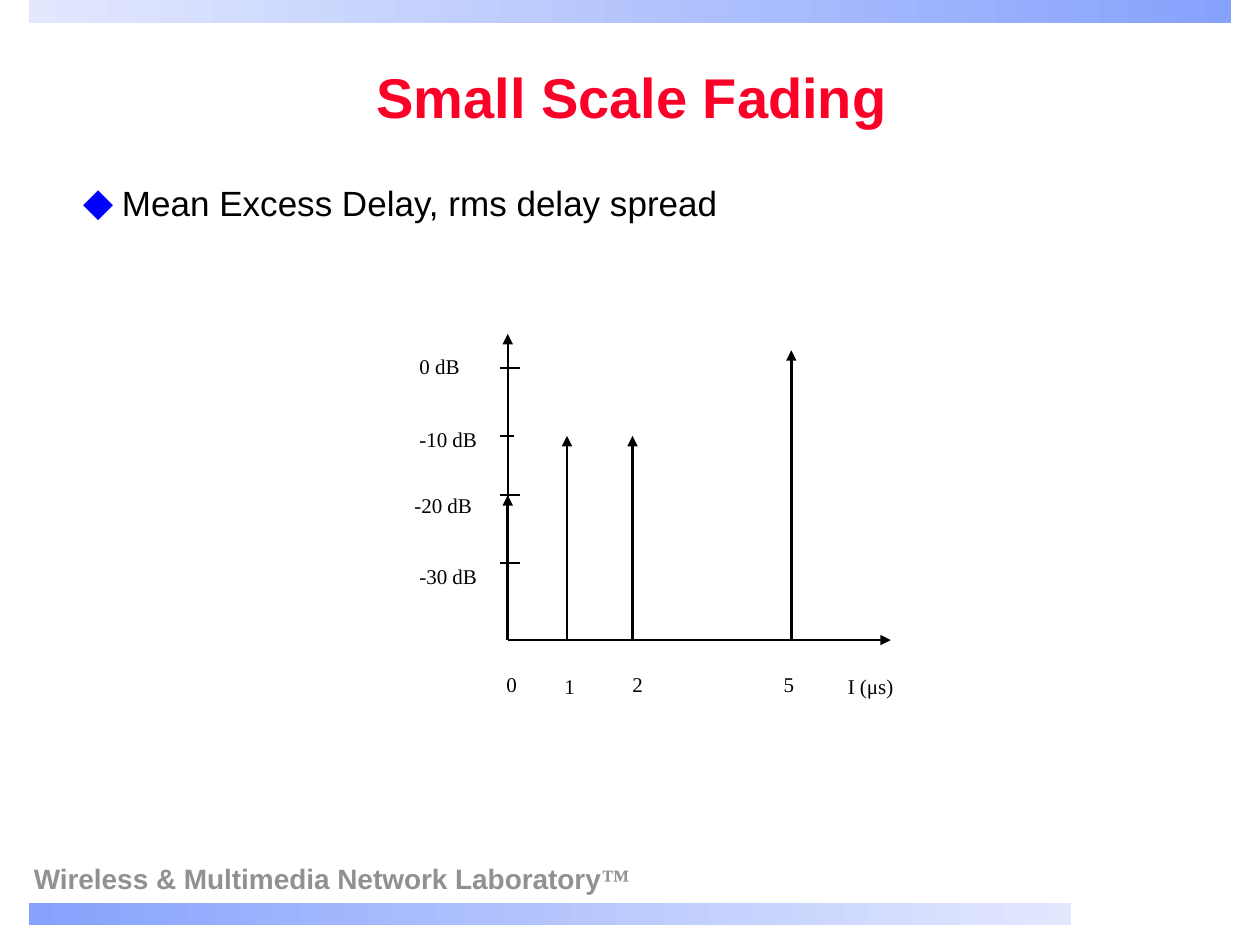
from dataclasses import dataclass

from lxml import etree
from pptx import Presentation
from pptx.dml.color import RGBColor
from pptx.enum.shapes import MSO_CONNECTOR, MSO_SHAPE
from pptx.enum.text import MSO_ANCHOR, PP_ALIGN
from pptx.oxml.ns import qn
from pptx.util import Inches, Pt

RECTANGLE = MSO_SHAPE.RECTANGLE
STRAIGHT = MSO_CONNECTOR.STRAIGHT
CENTER, LEFT = PP_ALIGN.CENTER, PP_ALIGN.LEFT
TOP, MIDDLE = MSO_ANCHOR.TOP, MSO_ANCHOR.MIDDLE


@dataclass(frozen=True)
class Theme:
    heading: str = "FC0128"
    ink: str = "000000"
    bullet: str = "0000FF"
    footer: str = "919191"
    bar_deep: str = "86A2FC"
    bar_pale: str = "E3E8FE"
    sans: str = "Arial"
    serif: str = "Times New Roman"
    title_size: int = 32
    body_size: int = 20
    footer_size: int = 16
    label_size: int = 12
    axis_width: float = 1
    path_width: float = 1.5


THEME = Theme()


def add_text(shapes, box, text, size, color, font, bold=False, align=LEFT,
             anchor=TOP, spacing=None, wrap=True):
    """Add a one-paragraph text box and return its paragraph."""
    frame = shapes.add_textbox(*map(Inches, box)).text_frame
    frame.word_wrap = wrap
    frame.vertical_anchor = anchor
    paragraph = frame.paragraphs[0]
    paragraph.alignment = align
    paragraph.line_spacing = spacing
    add_run(paragraph, text, size, color, font, bold)
    return paragraph


def add_run(paragraph, text, size, color, font, bold=False):
    run = paragraph.add_run()
    run.text = text
    for key, value in {"size": Pt(size), "name": font, "bold": bold}.items():
        setattr(run.font, key, value)
    run.font.color.rgb = RGBColor.from_string(color)


def add_line(shapes, start, end, width, arrow=False):
    line = shapes.add_connector(STRAIGHT, *map(Inches, (*start, *end)))
    line.line.width = Pt(width)
    line.line.color.rgb = RGBColor.from_string(THEME.ink)
    if arrow:
        etree.SubElement(line.line._get_or_add_ln(), qn("a:tailEnd"), type="triangle")
    etree.SubElement(line._element.spPr, qn("a:effectLst"))


def add_bar(slide, box, colors):
    bar = slide.shapes.add_shape(RECTANGLE, *map(Inches, box))
    bar.shadow.inherit = False
    bar.line.fill.background()
    bar.fill.gradient()
    bar.fill.gradient_angle = 0
    for stop, color in zip(bar.fill.gradient_stops, colors):
        stop.color.rgb = RGBColor.from_string(color)


def add_footer(slide, box):
    laboratory = add_text(slide.shapes, box, "Wireless & Multimedia Network Laboratory",
                          THEME.footer_size, THEME.footer, THEME.sans, True, spacing=0.9)
    add_run(laboratory, "™", THEME.footer_size, THEME.footer, THEME.serif, True)


def add_title(slide, box):
    add_text(slide.shapes, box, "Small Scale Fading", THEME.title_size, THEME.heading,
             THEME.sans, True, CENTER, MIDDLE, 0.9)


def add_topic(slide, box):
    topic = add_text(slide.shapes, box, "Mean Excess Delay, rms delay spread",
                     THEME.body_size, THEME.ink, THEME.sans)
    properties = topic._p.get_or_add_pPr()
    indent = Inches(0.31)
    properties.set("marL", str(indent))
    properties.set("indent", str(-indent))
    bullet_color = etree.SubElement(properties, qn("a:buClr"))
    etree.SubElement(bullet_color, qn("a:srgbClr"), val=THEME.bullet)
    etree.SubElement(properties, qn("a:buSzPct"), val="125000")
    etree.SubElement(properties, qn("a:buFont"), typeface=THEME.sans)
    etree.SubElement(properties, qn("a:buChar"), char="⬥")


def add_delay_profile(slide, box):
    """Draw received power against excess delay, with the axes inside the box."""
    left, top, width, height = box
    shapes = slide.shapes.add_group_shape().shapes
    origin_x, origin_y = left + 0.84, top + 2.43

    for end in ((left + 3.88, origin_y), (origin_x, top)):
        add_line(shapes, (origin_x, origin_y), end, THEME.axis_width, True)

    # Power label: tick height, tick length, label offset
    powers = {
        "-30 dB": (1.82, 0.16, (0.04, 1.77)),
        "-20 dB": (1.28, 0.16, (0, 1.21)),
        "-10 dB": (0.81, 0.11, (0.04, 0.69)),
        "0 dB": (0.27, 0.16, (0.04, 0.11)),
    }
    # Delay label: distance from the origin, arrow tip, label offset
    delays = {
        "0": (0, 1.28, (0.73, 2.63)),
        "1": (0.47, 0.81, (1.19, 2.65)),
        "2": (0.99, 0.81, (1.73, 2.63)),
        "5": (2.25, 0.13, (2.93, 2.63)),
    }
    for tick_y, length, _ in powers.values():
        tick_x = origin_x - 0.06
        add_line(shapes, (tick_x, top + tick_y), (tick_x + length, top + tick_y),
                 THEME.axis_width)
    for distance, tip, _ in delays.values():
        delay_x = origin_x + distance
        add_line(shapes, (delay_x, origin_y), (delay_x, top + tip), THEME.path_width, True)

    labels = [(text, offset, 0.66) for text, (_, _, offset) in powers.items()]
    labels += [(text, offset, 0.29) for text, (_, _, offset) in delays.items()]
    labels.append(("Ι (μs)", (width - 0.75, height - 0.3), 0.75))
    for text, (dx, dy), label_width in labels:
        add_text(shapes, (left + dx, top + dy, label_width, 0.3), text,
                 THEME.label_size, THEME.ink, THEME.serif, wrap=False)


def main():
    presentation = Presentation()
    presentation.slide_width, presentation.slide_height = Inches(10), Inches(7.5)
    slide = presentation.slides.add_slide(presentation.slide_layouts[6])

    add_bar(slide, (0.23, 7.17, 8.27, 0.17), (THEME.bar_deep, THEME.bar_pale))
    add_bar(slide, (0.23, 0, 9.54, 0.18), (THEME.bar_pale, THEME.bar_deep))
    add_footer(slide, (0.17, 6.82, 5, 0.34))
    add_title(slide, (0.62, 0.42, 8.79, 0.75))
    add_topic(slide, (0.56, 1.39, 9.15, 5.28))
    add_delay_profile(slide, (3.19, 2.65, 4.19, 2.95))

    presentation.save("out.pptx")


if __name__ == "__main__":
    main()
